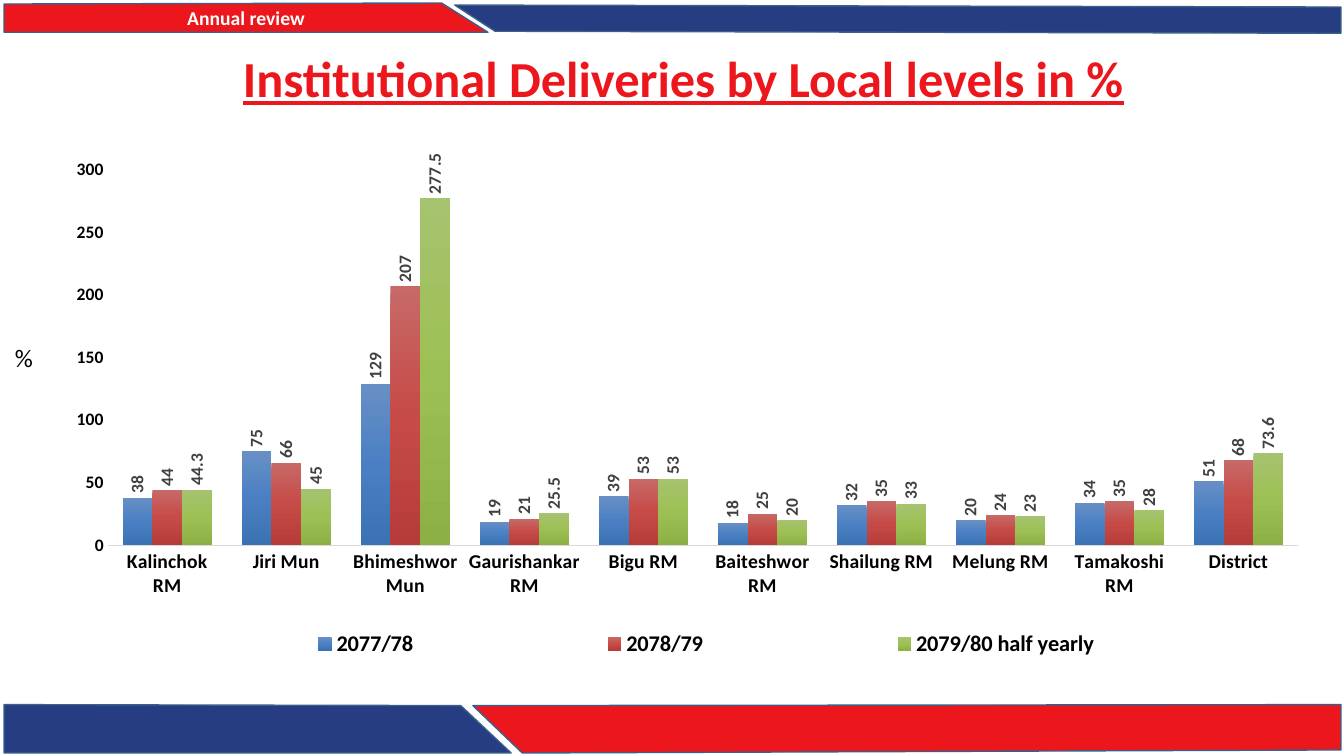
from copy import deepcopy
from typing import NamedTuple

from pptx import Presentation
from pptx.chart import data as chart_data
from pptx.dml import color
from pptx.enum import chart as chart_enum, text
from pptx.oxml import parse_xml
from pptx.oxml import ns
from pptx.util import Inches, Pt

FONT = "Calibri"
COLORS = {
    "red": "EC171C", "blue": "263D81", "outline": "3A5F8C", "white": "FFFFFF",
    "black": "000000", "label": "404040", "axis": "D9D9D9",
}


class Banner(NamedTuple):
    points: list[tuple[float, float]]
    fill: str
    caption: str = ""


class YearSeries(NamedTuple):
    name: str
    values: list[float]
    gradient: tuple[str, str, str]
    number_format: str


BANNERS = [
    Banner([(0.04, 0.04), (4.38, 0.03), (4.84, 0.32), (0.04, 0.32)], "red", "Annual review"),
    Banner([(0.04, 6.99), (4.57, 7), (5.07, 7.47), (0.04, 7.47)], "blue"),
    Banner([(4.69, 7), (13.3, 6.99), (13.3, 7.44), (5.18, 7.47)], "red"),
    Banner([(4.51, 0.05), (13.3, 0.07), (13.3, 0.33), (4.91, 0.31)], "blue"),
]

LOCAL_LEVELS = [
    "Kalinchok RM", "Jiri Mun", "Bhimeshwor Mun", "Gaurishankar RM", "Bigu RM",
    "Baiteshwor RM", "Shailung RM", "Melung RM", "Tamakoshi RM", "District",
]

YEARS = [
    YearSeries("2077/78", [38, 75, 129, 19, 39, 18, 32, 20, 34, 51],
               ("688FC5", "4A80C3", "3B72B3"), "#,##0"),
    YearSeries("2078/79", [44, 66, 207, 21, 53, 25, 35, 24, 35, 68],
               ("C76967", "C64B47", "B63C39"), "#,##0"),
    YearSeries("2079/80 half yearly", [44.3, 45, 277.5, 25.5, 53, 20, 33, 23, 28, 73.6],
               ("A6C36F", "9DC054", "8DB045"), "General"),
]


def rgb(name: str) -> color.RGBColor:
    return color.RGBColor.from_string(COLORS[name])


def style_font(font, size: float, color_name: str, bold: bool = True) -> None:
    font.name, font.size, font.bold = FONT, Pt(size), bold
    font.color.rgb = rgb(color_name)


def add_banner(slide, banner: Banner) -> None:
    start, *corners = [(Inches(x), Inches(y)) for x, y in banner.points]
    builder = slide.shapes.build_freeform(*start)
    builder.add_line_segments(corners, close=True)
    shape = builder.convert_to_shape()
    shape.shadow.inherit = False
    shape.fill.solid()
    shape.fill.fore_color.rgb = rgb(banner.fill)
    shape.line.color.rgb = rgb("outline")
    shape.line.width = Pt(1)
    if banner.caption:
        frame = shape.text_frame
        frame.vertical_anchor = text.MSO_ANCHOR.MIDDLE
        paragraph = frame.paragraphs[0]
        paragraph.text = banner.caption
        paragraph.alignment = text.PP_ALIGN.CENTER
        style_font(paragraph.font, 14, "white")


def add_text(slide, box: tuple[float, float, float, float], content: str):
    frame = slide.shapes.add_textbox(*map(Inches, box)).text_frame
    frame.word_wrap = True
    paragraph = frame.paragraphs[0]
    paragraph.text = content
    return frame, paragraph


def set_layout(element, index: int, box: tuple[float, float, float, float],
               target: str = "") -> None:
    """Place a chart part by fractions of the chart's size."""
    for old_layout in element.findall(ns.qn("c:layout")):
        element.remove(old_layout)
    sizes = "".join(f'<c:{key} val="{value}"/>' for key, value in zip("xywh", box))
    element.insert(index, parse_xml(
        f'<c:layout {ns.nsdecls("c")}><c:manualLayout>{target}'
        f'<c:xMode val="edge"/><c:yMode val="edge"/>{sizes}'
        '</c:manualLayout></c:layout>'))


def style_series(series, year: YearSeries) -> None:
    fill = series.format.fill
    fill.gradient()
    stop_list = series._element.xpath("c:spPr/a:gradFill/a:gsLst")[0]
    stop_list.append(deepcopy(stop_list[-1]))
    for index, (stop, hex_color) in enumerate(zip(fill.gradient_stops, year.gradient)):
        stop.position = index / 2
        stop.color.rgb = color.RGBColor.from_string(hex_color)
    fill.gradient_angle = 270
    series.invert_if_negative = False

    labels = series.data_labels
    labels.show_value = True
    labels.position = chart_enum.XL_LABEL_POSITION.OUTSIDE_END
    labels.number_format = year.number_format
    labels.number_format_is_linked = False
    style_font(labels.font, 12.5, "label")
    body = labels._element.xpath("c:txPr/a:bodyPr")[0]
    body.set("rot", "-5400000")
    body.set("vert", "horz")


def add_deliveries_chart(slide) -> None:
    data = chart_data.CategoryChartData()
    data.categories = LOCAL_LEVELS
    for year in YEARS:
        data.add_series(year.name, year.values)
    chart = slide.shapes.add_chart(
        chart_enum.XL_CHART_TYPE.COLUMN_CLUSTERED,
        Inches(0.41), Inches(1.33), Inches(12.68), Inches(5.5), data).chart
    chart.has_title = False
    style_font(chart.font, 10, "black", bold=False)

    # Columns
    plot = chart.plots[0]
    plot.gap_width, plot.overlap = 100, 0
    plot.vary_by_categories = False
    for series, year in zip(plot.series, YEARS):
        style_series(series, year)

    # Axes
    for axis, size in ((chart.category_axis, 14), (chart.value_axis, 12.5)):
        axis.has_major_gridlines = False
        axis.major_tick_mark = axis.minor_tick_mark = chart_enum.XL_TICK_MARK.NONE
        style_font(axis.tick_labels.font, size, "black")
    chart.category_axis.format.line.color.rgb = rgb("axis")
    chart.category_axis.format.line.width = Pt(1)
    value_axis = chart.value_axis
    value_axis.format.line.fill.background()
    value_axis.minimum_scale, value_axis.maximum_scale = 0, 300
    value_axis.major_unit = 50

    # Legend and layout
    chart.has_legend = True
    legend = chart.legend
    legend.position = chart_enum.XL_LEGEND_POSITION.BOTTOM
    legend.include_in_layout = False
    style_font(legend.font, 16, "black")
    set_layout(legend._element, 1, (0.07, 0.87, 0.9, 0.1))
    plot_area = chart._chartSpace.xpath("c:chart/c:plotArea")[0]
    set_layout(plot_area, 0, (0.052, 0.065, 0.931, 0.677),
               '<c:layoutTarget val="inner"/>')


def main() -> None:
    presentation = Presentation()
    presentation.slide_width, presentation.slide_height = Inches(13.33), Inches(7.5)
    slide = presentation.slides.add_slide(presentation.slide_layouts[6])

    # Header and footer bands
    for banner in BANNERS:
        add_banner(slide, banner)

    # Title
    frame, paragraph = add_text(
        slide, (0.73, 0.25, 12.1, 1.12), "Institutional Deliveries by Local levels in %")
    frame.vertical_anchor = text.MSO_ANCHOR.MIDDLE
    paragraph.alignment = text.PP_ALIGN.CENTER
    paragraph.line_spacing = 0.9
    style_font(paragraph.font, 36, "red")
    paragraph.font.underline = True

    # Unit beside the value axis
    _, paragraph = add_text(slide, (0.05, 3.35, 0.44, 0.4), "%")
    style_font(paragraph.font, 18, "black", bold=False)

    add_deliveries_chart(slide)
    presentation.save("out.pptx")


if __name__ == "__main__":
    main()
